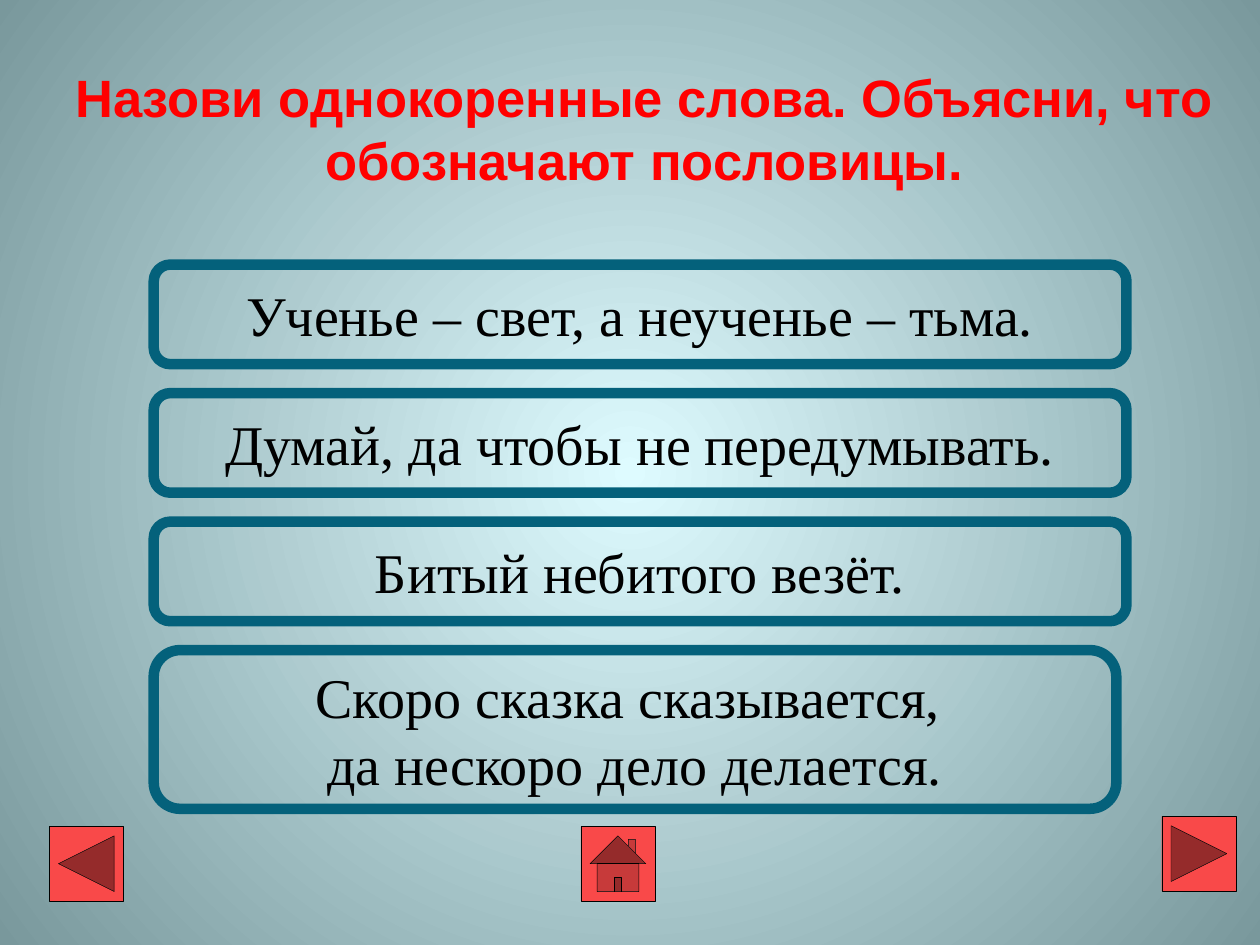
from lxml.etree import SubElement
from pptx import Presentation
from pptx.dml.color import RGBColor
from pptx.enum.shapes import MSO_SHAPE
from pptx.enum.text import MSO_ANCHOR, PP_ALIGN
from pptx.oxml.ns import qn
from pptx.util import Inches, Pt

TITLE = "Назови однокоренные слова. Объясни, что обозначают пословицы."
PROVERBS = [
    (["Ученье – свет, а неученье – тьма."], 7.72, 0.79),
    (["Думай, да чтобы не передумывать."], 7.72, 0.79),
    (["Битый небитого везёт."], 7.72, 0.79),
    (["Скоро сказка сказывается, ", "да нескоро дело делается."], 7.64, 1.26),
]
BUTTONS = [
    (MSO_SHAPE.ACTION_BUTTON_FORWARD_OR_NEXT, 9.22, 6.48),
    (MSO_SHAPE.ACTION_BUTTON_HOME, 4.61, 6.56),
    (MSO_SHAPE.ACTION_BUTTON_BACK_OR_PREVIOUS, 0.39, 6.56),
]
COLORS = {
    "center": "DEFBFF", "edge": "79989C", "frame": "04617B",
    "text": "000000", "title": "FF0000", "button": "F94949",
}
LEFT, TOP, GAP, BUTTON_SIZE = 1.22, 2.1, 0.23, 0.59


def rgb(name):
    return RGBColor.from_string(COLORS[name])


def set_background(slide):
    fill = slide.background.fill
    fill.gradient()
    for stop, name, position in zip(fill.gradient_stops, ("center", "edge"), (0, 1)):
        stop.color.rgb = rgb(name)
        stop.position = position
    grad = next(slide.element.iter(qn("a:gradFill")))
    grad.remove(grad.find(qn("a:lin")))
    circle = SubElement(grad, qn("a:path"), {"path": "circle"})
    SubElement(circle, qn("a:fillToRect"), {side: "50000" for side in "ltrb"})


def write(tf, lines, font, size, color, bold=False):
    for i, line in enumerate(lines):
        p = tf.paragraphs[0] if i == 0 else tf.add_paragraph()
        p.text = line
        p.alignment = PP_ALIGN.CENTER
        p.font.name, p.font.size, p.font.bold = font, Pt(size), bold
        p.font.color.rgb = rgb(color)


def add_shape(slide, kind, box, line_color, line_width):
    sp = slide.shapes.add_shape(kind, *map(Inches, box))
    sp.shadow.inherit = False
    sp.line.color.rgb = rgb(line_color)
    sp.line.width = Pt(line_width)
    return sp


prs = Presentation()
prs.slide_width, prs.slide_height = Inches(10), Inches(7.5)
s = prs.slides.add_slide(prs.slide_layouts[6])
set_background(s)

top = TOP
for lines, width, height in PROVERBS:
    sp = add_shape(s, MSO_SHAPE.ROUNDED_RECTANGLE, (LEFT, top, width, height), "frame", 6)
    sp.fill.background()
    tf = sp.text_frame
    tf.word_wrap = False
    tf.vertical_anchor = MSO_ANCHOR.MIDDLE
    write(tf, lines, "Times New Roman", 32, "text")
    top += height + GAP

tf = s.shapes.add_textbox(*map(Inches, (0.47, 0.47, 9.29, 1.11))).text_frame
tf.word_wrap = True
write(tf, [TITLE], "Arial", 30, "title", bold=True)

for kind, left, y in BUTTONS:
    sp = add_shape(s, kind, (left, y, BUTTON_SIZE, BUTTON_SIZE), "text", 0.25)
    sp.fill.solid()
    sp.fill.fore_color.rgb = rgb("button")

prs.save("out.pptx")
